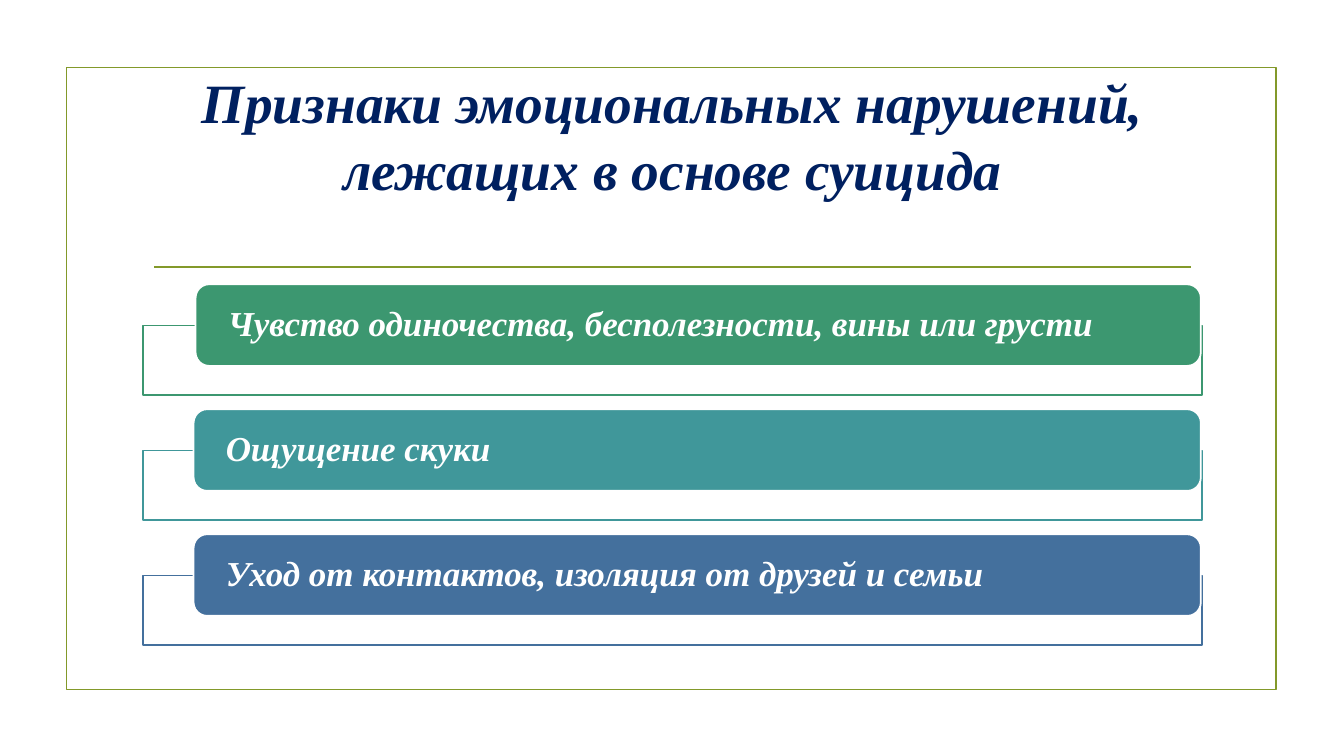
from lxml import etree
from pptx import Presentation
from pptx.dml.color import RGBColor
from pptx.enum.shapes import MSO_CONNECTOR, MSO_SHAPE
from pptx.enum.text import MSO_ANCHOR, MSO_AUTO_SIZE, PP_ALIGN
from pptx.oxml.ns import qn
from pptx.util import Inches, Pt

FONT = "Times New Roman"
OLIVE, NAVY, WHITE = "83992A", "002060", "FFFFFF"
TITLE = "Признаки эмоциональных нарушений, лежащих в основе суицида"
# Text, colour, left edge of the label
SIGNS = [
    ("Чувство одиночества, бесполезности, вины или грусти", "3C9770", 1.94),
    ("Ощущение скуки", "40979A", 1.92),
    ("Уход от контактов, изоляция от друзей и семьи", "44709D", 1.92),
]
SIGN_PITCH = 1.24
LABEL_RIGHT = 11.91


def color(hex_value):
    return RGBColor.from_string(hex_value)


def set_line(shape, hex_value):
    shape.line.color.rgb = color(hex_value)
    shape.line.width = Pt(1.25)


def add_box(slide, kind, left, top, width, height, fill, line):
    shape = slide.shapes.add_shape(
        kind, Inches(left), Inches(top), Inches(width), Inches(height))
    shape.shadow.inherit = False
    if fill:
        shape.fill.solid()
        shape.fill.fore_color.rgb = color(fill)
    else:
        shape.fill.background()
    set_line(shape, line)
    return shape


def write_text(shape, text, size, hex_value, alignment):
    frame = shape.text_frame
    frame.word_wrap = True
    frame.auto_size = MSO_AUTO_SIZE.NONE
    frame.vertical_anchor = MSO_ANCHOR.MIDDLE
    paragraph = frame.paragraphs[0]
    paragraph.alignment = alignment
    run = paragraph.add_run()
    run.text = text
    run.font.name = FONT
    run.font.size = Pt(size)
    run.font.bold = run.font.italic = True
    run.font.color.rgb = color(hex_value)
    return frame


def add_frame(slide, left, top, width, height):
    """Draw the slide border and the rule under the title."""
    add_box(slide, MSO_SHAPE.RECTANGLE, left, top, width, height, None, OLIVE)
    rule_top = Inches(top + 1.98)
    rule = slide.shapes.add_connector(
        MSO_CONNECTOR.STRAIGHT, Inches(left + 0.87), rule_top,
        Inches(left + width - 0.85), rule_top)
    set_line(rule, OLIVE)
    etree.SubElement(rule._element.spPr, qn("a:effectLst"))


def add_title(slide, left, top, width, height):
    title = slide.shapes.title
    title.left, title.top = Inches(left), Inches(top)
    title.width, title.height = Inches(width), Inches(height)
    write_text(title, TITLE, 39.6, NAVY, PP_ALIGN.CENTER)


def add_sign(slide, left, top, width, text, hex_value, label_left):
    """Draw an outlined box with a coloured label over its upper edge."""
    outline = add_box(slide, MSO_SHAPE.RECTANGLE, left, top + 0.41, width, 0.69,
                      WHITE, hex_value)
    white = outline.fill._xPr.find(qn("a:solidFill"))[0]
    etree.SubElement(white, qn("a:alpha"), val="90000")
    label = add_box(slide, MSO_SHAPE.ROUNDED_RECTANGLE, label_left, top,
                    LABEL_RIGHT - label_left, 0.81, hex_value, WHITE)
    frame = write_text(label, text, 25, WHITE, PP_ALIGN.LEFT)
    frame.margin_left = frame.margin_right = Inches(0.28)
    frame.margin_top = frame.margin_bottom = 0
    frame.paragraphs[0].line_spacing = 0.9


def main():
    presentation = Presentation()
    presentation.slide_width = Inches(13.33)
    presentation.slide_height = Inches(7.5)
    slide = presentation.slides.add_slide(presentation.slide_layouts[5])
    add_frame(slide, 0.66, 0.67, 12, 6.17)
    add_title(slide, 1.42, 0.62, 10.5, 1.43)
    for index, (text, hex_value, label_left) in enumerate(SIGNS):
        add_sign(slide, 1.42, 2.82 + index * SIGN_PITCH, 10.5,
                 text, hex_value, label_left)
    presentation.save("out.pptx")


if __name__ == "__main__":
    main()
